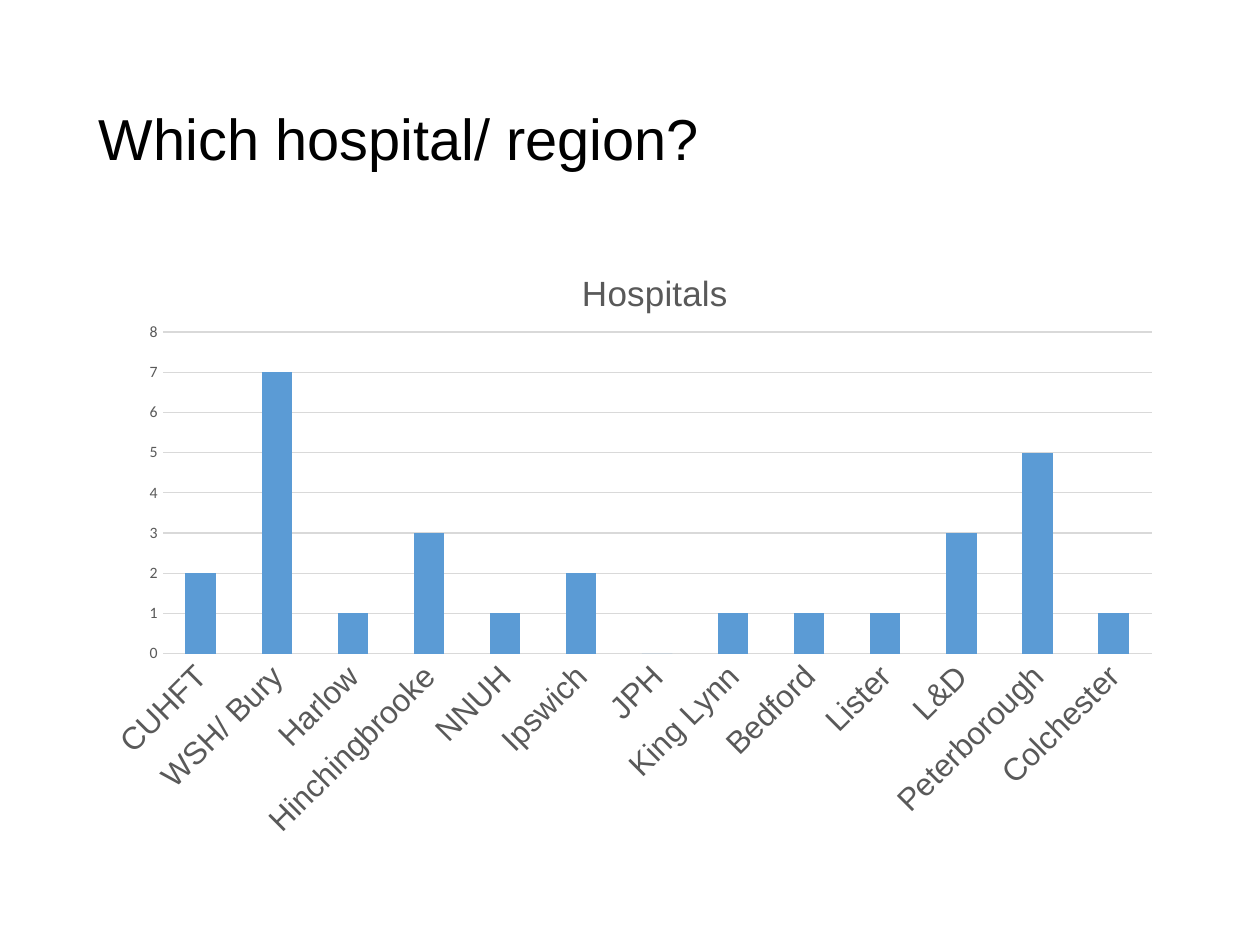
import pptx
import pptx.chart.data
import pptx.dml.color
import pptx.enum.chart
import pptx.enum.text
import pptx.oxml
import pptx.oxml.ns
import pptx.util

Pt = pptx.util.Pt
COLOURS = {"heading": "000000", "label": "595959", "grid": "D9D9D9", "bar": "5B9BD5"}


def write_text(frame, text, size, colour, font="Arial", line_spacing=None):
    paragraph = frame.paragraphs[0]
    if line_spacing:
        paragraph.line_spacing = line_spacing
    run = paragraph.add_run()
    run.text = text
    run.font.size = Pt(size)
    run.font.name = font
    run.font.bold = False
    run.font.color.rgb = pptx.dml.color.RGBColor.from_string(COLOURS[colour])


def place(parent, **fractions):
    """Fix the position of a chart part, as fractions of the chart."""
    qn = pptx.oxml.ns.qn
    layout = parent.find(qn("c:layout"))
    if layout is None:
        layout = parent.makeelement(qn("c:layout"), {})
        parent.insert(0, layout)
    manual = layout.makeelement(qn("c:manualLayout"), {})
    layout.append(manual)
    settings = {"xMode": "edge", "yMode": "edge", **fractions}
    if "w" in fractions:
        settings = {"layoutTarget": "inner", **settings}
    for tag, value in settings.items():
        manual.append(manual.makeelement(qn(f"c:{tag}"), {"val": str(value)}))


presentation = pptx.Presentation()
presentation.slide_width = Pt(720)
presentation.slide_height = Pt(540)
slide = presentation.slides.add_slide(presentation.slide_layouts[6])
left, width = Pt(49.5), Pt(621)

# Heading
heading = slide.shapes.add_textbox(left, Pt(28.75), width, Pt(104.4)).text_frame
heading.word_wrap = True
heading.vertical_anchor = pptx.enum.text.MSO_ANCHOR.MIDDLE
write_text(heading, "Which hospital/ region?", size=33, colour="heading", line_spacing=0.9)

# Cases per hospital
cases = {
    "CUHFT": 2, "WSH/ Bury": 7, "Harlow": 1, "Hinchingbrooke": 3, "NNUH": 1,
    "Ipswich": 2, "JPH": 0, "King Lynn": 1, "Bedford": 1, "Lister": 1,
    "L&D": 3, "Peterborough": 5, "Colchester": 1,
}
hospital_data = pptx.chart.data.CategoryChartData()
hospital_data.categories = list(cases)
hospital_data.add_series("Series 1", list(cases.values()))
hospitals = slide.shapes.add_chart(
    pptx.enum.chart.XL_CHART_TYPE.COLUMN_STACKED,
    left, Pt(133.2), width, Pt(353.5), hospital_data,
).chart
hospitals.has_legend = False
hospitals.font.size = Pt(10)
hospitals.font.name = "Calibri"

# Chart title
hospitals.has_title = True
write_text(hospitals.chart_title.text_frame, "Hospitals", size=20, colour="label")
hospitals.chart_title.include_in_layout = False

# Columns
columns = hospitals.plots[0]
columns.gap_width = 150
columns.overlap = 100
columns.vary_by_categories = False
bar_fill = columns.series[0].format.fill
bar_fill.solid()
bar_fill.fore_color.rgb = pptx.dml.color.RGBColor.from_string(COLOURS["bar"])

# Axes
names, counts = hospitals.category_axis, hospitals.value_axis
for axis, size, font in ((names, 18, "Arial"), (counts, 9, "Calibri")):
    axis.major_tick_mark = pptx.enum.chart.XL_TICK_MARK.NONE
    axis.minor_tick_mark = pptx.enum.chart.XL_TICK_MARK.NONE
    axis.format.line.fill.background()
    labels = axis.tick_labels.font
    labels.size = Pt(size)
    labels.name = font
    labels.color.rgb = pptx.dml.color.RGBColor.from_string(COLOURS["label"])
names.has_major_gridlines = False
names._element.txPr.bodyPr.set("rot", "-2700000")
counts.minimum_scale, counts.maximum_scale, counts.major_unit = 0, 8, 1
counts.has_major_gridlines = True
grid = counts.major_gridlines.format.line
grid.width = Pt(0.75)
grid.color.rgb = pptx.dml.color.RGBColor.from_string(COLOURS["grid"])

# Positions inside the chart
place(hospitals.chart_title._element, x=0.45, y=0.05)
place(hospitals._chartSpace.chart.plotArea, x=0.07, y=0.16, w=0.91, h=0.52)

presentation.save("out.pptx")
